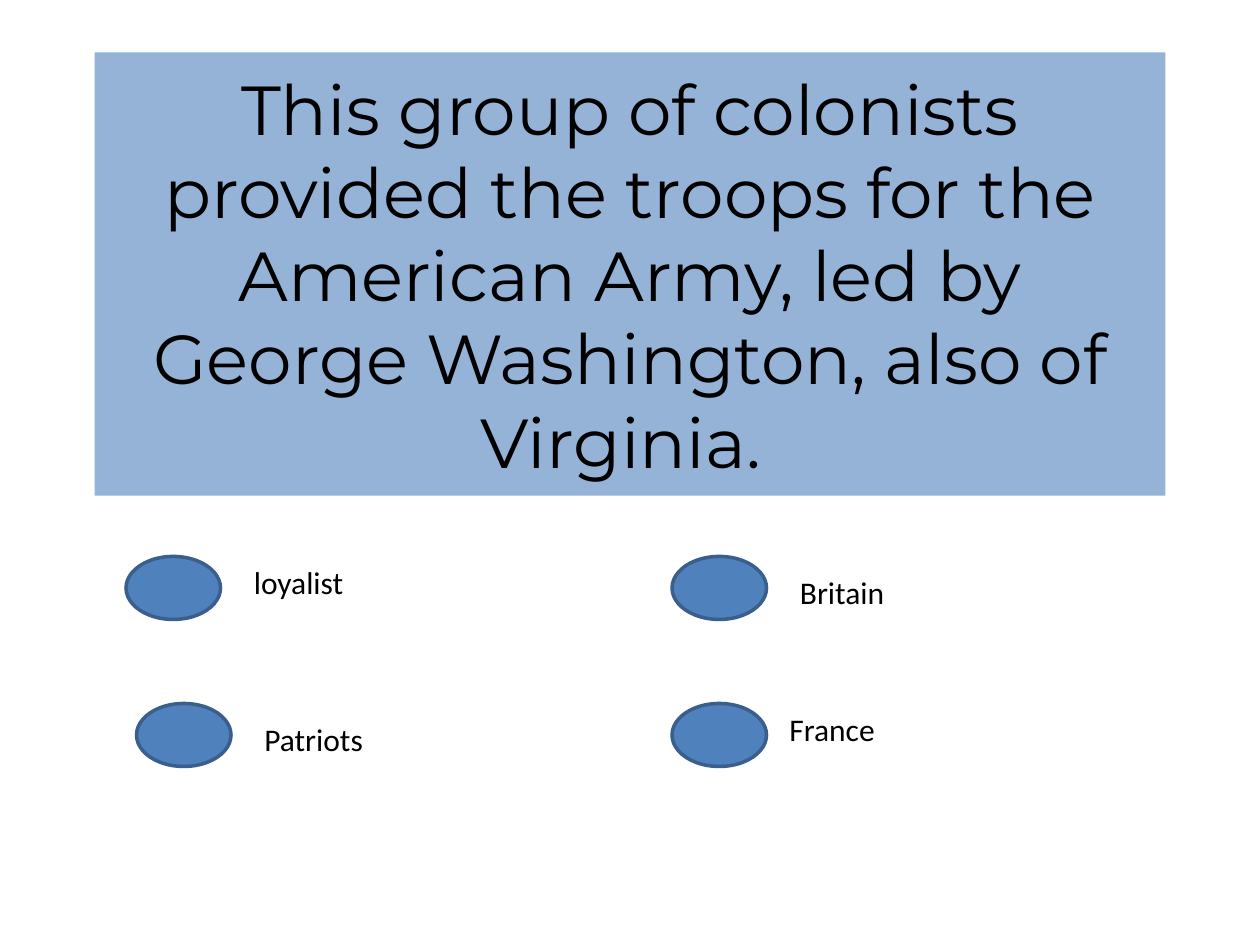
from dataclasses import dataclass

from pptx import Presentation
from pptx.dml.color import RGBColor
from pptx.enum.shapes import MSO_SHAPE
from pptx.enum.text import MSO_ANCHOR, MSO_AUTO_SIZE, PP_ALIGN
from pptx.util import Inches, Pt

OVAL = MSO_SHAPE.OVAL
MIDDLE = MSO_ANCHOR.MIDDLE
NO_FIT = MSO_AUTO_SIZE.NONE
GROW = MSO_AUTO_SIZE.SHAPE_TO_FIT_TEXT
CENTER = PP_ALIGN.CENTER
LEFT = PP_ALIGN.LEFT

TITLE_ONLY = 5
UNITS_PER_INCH = 12
MARKER_SIZE = (9, 6)
LABEL_HEIGHT = 4.8

QUESTION = (
    "This group of colonists provided the troops for the American Army, "
    "led by George Washington, also of Virginia. "
)
ANSWERS = [
    ("loyalist", (12, 53), (23, 53), 54),
    ("Britain", (64, 53), (75, 54), 22),
    ("Patriots", (13, 67), (24, 68), 23),
    ("France", (64, 67), (74, 67), 23),
]


@dataclass(frozen=True)
class Theme:
    title_font: str = "Montserrat"
    title_size: float = 39.6
    label_font: str = "Calibri"
    label_size: float = 18
    text: RGBColor = RGBColor(0x00, 0x00, 0x00)
    banner: RGBColor = RGBColor(0x95, 0xB3, 0xD7)
    marker: RGBColor = RGBColor(0x4F, 0x81, 0xBD)
    marker_line: RGBColor = RGBColor(0x3A, 0x5F, 0x8C)
    marker_line_width: float = 2


THEME = Theme()


def grid(*units):
    return [Inches(unit / UNITS_PER_INCH) for unit in units]


def write_text(shape, text, font_name, size, alignment, fit):
    frame = shape.text_frame
    frame.text = text
    frame.word_wrap = True
    frame.auto_size = fit
    paragraph = frame.paragraphs[0]
    paragraph.alignment = alignment
    paragraph.font.name = font_name
    paragraph.font.size = Pt(size)
    paragraph.font.color.rgb = THEME.text


def format_title(slide):
    title = slide.shapes.title
    title.left, title.top, title.width, title.height = grid(9, 5, 102, 42.2)
    title.fill.solid()
    title.fill.fore_color.rgb = THEME.banner
    write_text(title, QUESTION, THEME.title_font, THEME.title_size, CENTER, NO_FIT)
    title.text_frame.vertical_anchor = MIDDLE


def add_marker(slide, position):
    marker = slide.shapes.add_shape(OVAL, *grid(*position, *MARKER_SIZE))
    marker.shadow.inherit = False
    marker.fill.solid()
    marker.fill.fore_color.rgb = THEME.marker
    marker.line.color.rgb = THEME.marker_line
    marker.line.width = Pt(THEME.marker_line_width)


def add_label(slide, text, position, width):
    label = slide.shapes.add_textbox(*grid(*position, width, LABEL_HEIGHT))
    write_text(label, text, THEME.label_font, THEME.label_size, LEFT, GROW)


def main():
    presentation = Presentation()
    presentation.slide_width = Inches(10)
    presentation.slide_height = Inches(7.5)
    slide = presentation.slides.add_slide(presentation.slide_layouts[TITLE_ONLY])
    format_title(slide)
    for text, marker_position, label_position, label_width in ANSWERS:
        add_marker(slide, marker_position)
        add_label(slide, text, label_position, label_width)
    presentation.save("out.pptx")


if __name__ == "__main__":
    main()
